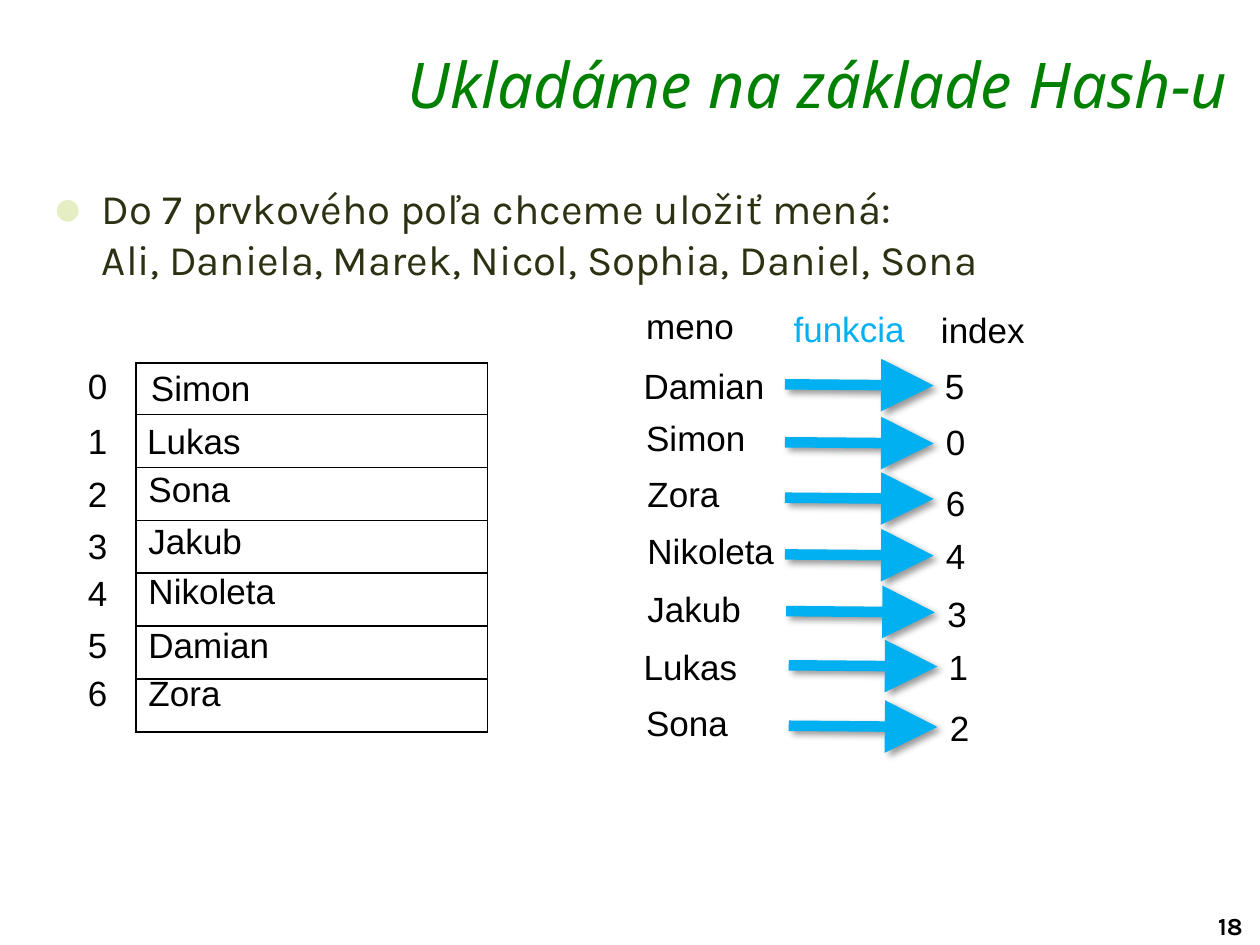
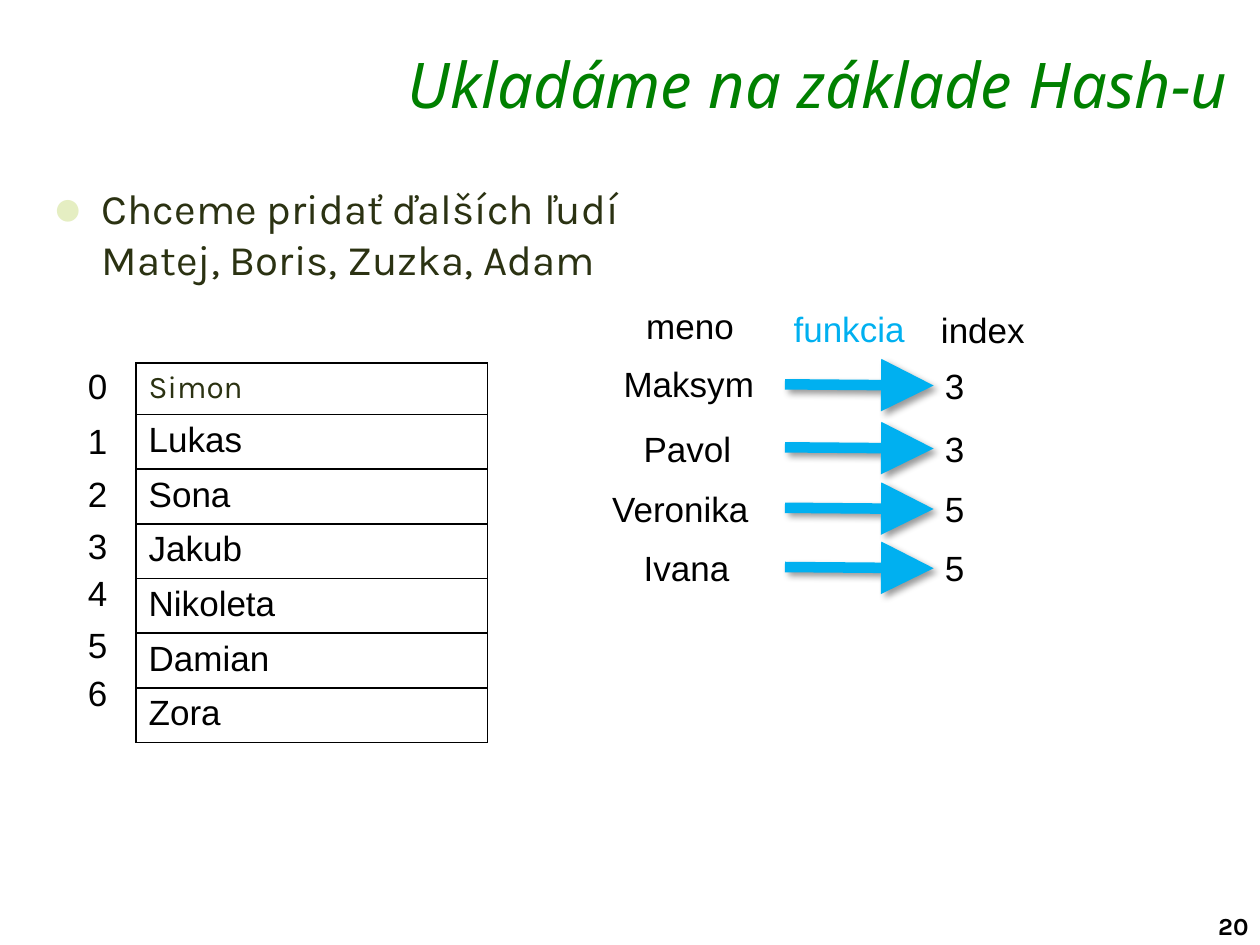
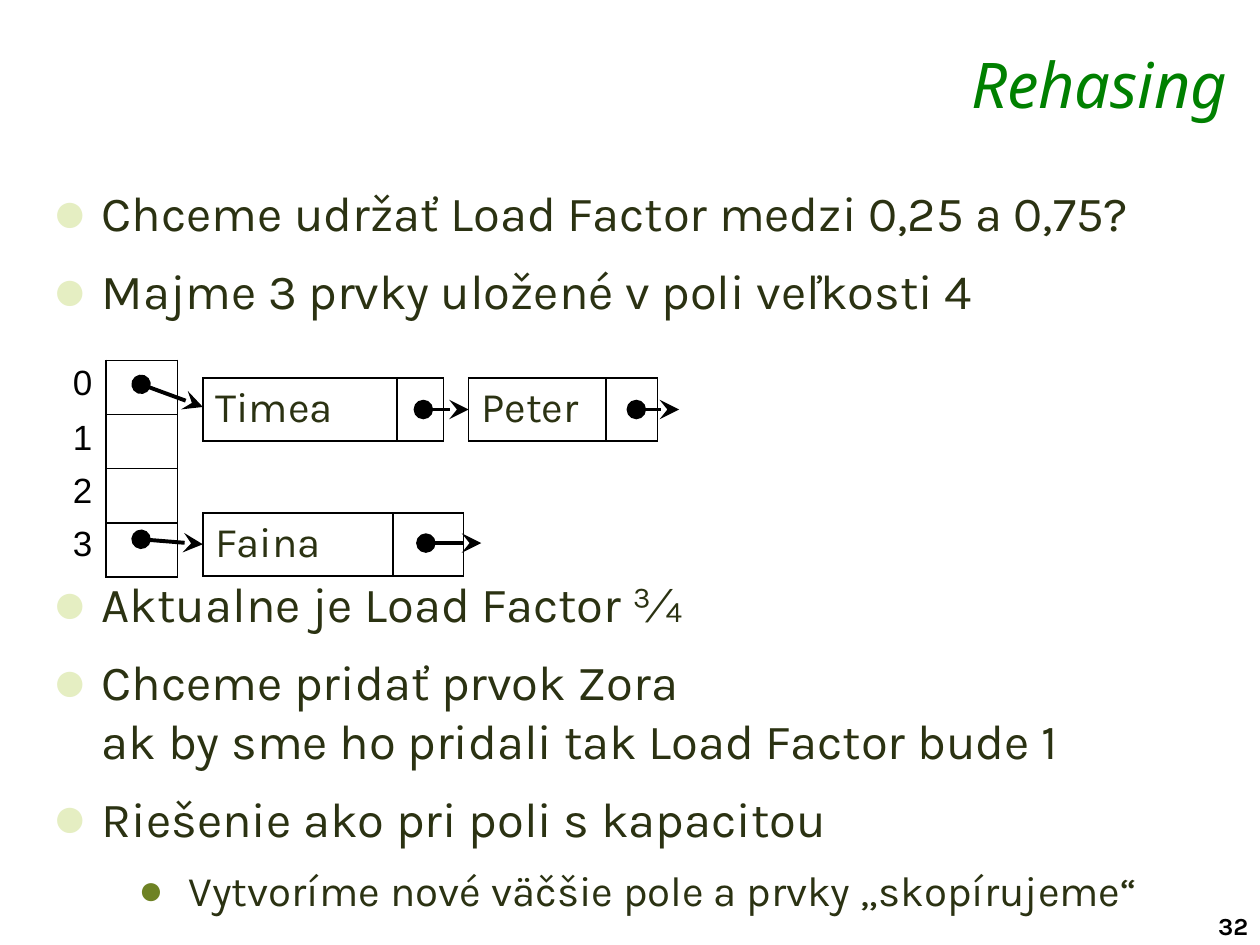
import pptx
import pptx.dml.color
import pptx.enum.shapes
import pptx.enum.text
import pptx.oxml
import pptx.oxml.ns
import pptx.util

PX = 9144  # 100 px to the inch
COLORS = {"black": "000000", "white": "FFFFFF", "title": "008000", "text": "2B3212",
          "blue": "00B0F0", "bullet": "E5EEC2", "subbullet": "6E8224"}
# style: font, size, colour
STYLES = {"title": ("Noto Sans", 36, "title"), "number": ("Karla", 14, "black"),
          "label": ("Arial", 20, "black"), "accent": ("Arial", 20, "blue"),
          "entry": ("Karla", 18, "text"), "body": ("Karla", 24, "text"),
          "large": ("Karla", 28, "text")}
# level: left margin, hanging indent, bullet colour, bullet percent, space before
LEVELS = [(39, 39, "bullet", 120, 5), (108, 40, "subbullet", 100, 4)]
# arrow: colour, width, start, end, effect
SHADOW = ('<a:outerShdw blurRad="50800" dist="38100" dir="2700000" algn="tl" rotWithShape="0">'
          '<a:srgbClr val="000000"><a:alpha val="40000"/></a:srgbClr></a:outerShdw>')
ARROWS = {"hash": ("blue", 6, "none", "triangle", SHADOW),
          "pointer": ("black", 2.25, "oval", "stealth", "")}
WIDTHS = {"Simon": 100, "Zora": 78, "Nikoleta": 122, "Jakub": 95, "Lukas": 95, "Sona": 86,
          "Damian": 117, "Maksym": 125, "Pavol": 90, "Veronika": 129, "Ivana": 89,
          "meno": 90, "funkcia": 109, "index": 87}
DIGIT_WIDTH = 36

HASH_LABELS = [("meno", 503, 237), ("index", 737, 240), ("funkcia", 620, 239)]
HASH_LABELS += [(str(index), 60, top)
                for index, top in enumerate([284, 328, 370, 411, 449, 490, 528])]

# name and its place, index and its place, arrow start
STORED = [("Damian", 501, 284, "5", 740, 284, 623, 305),
          ("Simon", 503, 326, "0", 741, 329, 623, 351),
          ("Zora", 504, 370, "6", 741, 377, 623, 395),
          ("Nikoleta", 504, 415, "4", 741, 419, 623, 440),
          ("Jakub", 504, 461, "3", 742, 465, 624, 485),
          ("Lukas", 501, 507, "1", 743, 507, 626, 528),
          ("Sona", 503, 552, "2", 744, 556, 626, 576)]
ADDED = [("Maksym", 485, 283, "3", 740, 284, 623, 305),
         ("Pavol", 501, 334, "3", 740, 334, 623, 355),
         ("Veronika", 476, 382, "5", 740, 382, 623, 403),
         ("Ivana", 501, 429, "5", 740, 429, 623, 450)]
SLOTS = [("Simon", 110, 286), ("Lukas", 107, 328), ("Sona", 108, 366), ("Jakub", 108, 407),
         ("Nikoleta", 108, 447), ("Damian", 108, 490), ("Zora", 108, 528)]

# bullets: text, style, level, extra space before
# tables: left, top, column widths, row heights, rows of (text, style)
# arrows: kind, start x, start y, end x, end y
SLIDES = [
    {"title": "Ukladáme na základe Hash-u", "number": "18", "body": (938, 125),
     "bullets": [("Do 7 prvkového poľa chceme uložiť mená:\n"
                  "Ali, Daniela, Marek, Nicol, Sophia, Daniel, Sona", "body", 0, 0)],
     "tables": [(108, 288, [279], [41] + [42] * 6, [[("", "entry")]] * 7)],
     "labels": HASH_LABELS + SLOTS, "hashes": STORED, "arrows": []},
    {"title": "Ukladáme na základe Hash-u", "number": "20", "body": (938, 125),
     "bullets": [("Chceme pridať ďalších ľudí\nMatej, Boris, Zuzka, Adam", "body", 0, 0)],
     "tables": [(108, 288, [279], [41] + [43] * 6,
                 [[(name, "label" if row else "entry")]
                  for row, (name, left, top) in enumerate(SLOTS)])],
     "labels": HASH_LABELS, "hashes": ADDED, "arrows": []},
    {"title": "Rehasing", "number": "32", "body": (919, 388),
     "bullets": [("Chceme udržať Load Factor medzi 0,25 a 0,75?", "large", 0, 0),
                 ("Majme 3 prvky uložené v poli veľkosti 4", "large", 0, 0),
                 ("Aktualne je Load Factor ¾", "large", 0, 134),
                 ("Chceme pridať prvok Zora\nak by sme ho pridali tak Load Factor bude 1",
                  "large", 0, 0),
                 ("Riešenie ako pri poli s kapacitou", "large", 0, 0),
                 ("Vytvoríme nové väčšie pole a prvky „skopírujeme“", "body", 1, 0)],
     "tables": [(84, 286, [57], [43] * 4, [[("", "entry")]] * 4),
                (161, 300, [154, 37], [50], [[("Timea", "body"), ("", "body")]]),
                (372, 300, [109, 41], [50], [[("Peter", "body"), ("", "body")]]),
                (161, 407, [151, 56], [50], [[("Faina", "body"), ("", "body")]])],
     "labels": [("0", 48, 281), ("1", 48, 325), ("2", 48, 367), ("3", 48, 409)],
     "hashes": [],
     "arrows": [("pointer", 112, 305, 161, 323), ("pointer", 336, 325, 372, 325),
                ("pointer", 505, 325, 539, 325), ("pointer", 112, 428, 161, 432),
                ("pointer", 338, 431, 382, 431)]},
]


def write(para, text, style):
    """Put text in a paragraph and give it one of the shared styles."""
    font_name, size, color = STYLES[style]
    para.text = text
    para.font.name = font_name
    para.font.size = pptx.util.Pt(size)
    para.font.color.rgb = pptx.dml.color.RGBColor.from_string(COLORS[color])


def add_xml(parent, tag, attributes="", content=""):
    parent.append(pptx.oxml.parse_xml(
        f'<a:{tag} {pptx.oxml.ns.nsdecls("a")} {attributes}>{content}</a:{tag}>'))


deck = pptx.Presentation()
deck.slide_width, deck.slide_height = 1000 * PX, 750 * PX

for slide in SLIDES:
    page = deck.slides.add_slide(deck.slide_layouts[5])

    title = page.shapes.title
    title.left, title.top, title.width, title.height = 229 * PX, 31 * PX, 755 * PX, 58 * PX
    title.text_frame.vertical_anchor = pptx.enum.text.MSO_ANCHOR.TOP
    title.text_frame.auto_size = pptx.enum.text.MSO_AUTO_SIZE.NONE
    para = title.text_frame.paragraphs[0]
    para.alignment = pptx.enum.text.PP_ALIGN.RIGHT
    write(para, slide["title"], "title")
    para.font.italic = True

    number = page.shapes.add_textbox(957 * PX, 718 * PX, 51 * PX, 33 * PX)
    number.text_frame.word_wrap = True
    para = number.text_frame.paragraphs[0]
    write(para, slide["number"], "number")
    para.font.bold = True

    width, height = slide["body"]
    body = page.shapes.add_textbox(32 * PX, 140 * PX, width * PX, height * PX)
    body.text_frame.word_wrap = True
    for position, (text, style, level, gap) in enumerate(slide["bullets"]):
        para = body.text_frame.add_paragraph() if position else body.text_frame.paragraphs[0]
        margin, hanging, color, percent, before = LEVELS[level]
        para.level = level
        para.space_before = pptx.util.Pt(before + gap if position else 0)
        para.space_after = pptx.util.Pt(6)
        properties = para._p.get_or_add_pPr()
        properties.set("marL", str(margin * PX))
        properties.set("indent", str(-hanging * PX))
        add_xml(properties, "buClr", content=f'<a:srgbClr val="{COLORS[color]}"/>')
        add_xml(properties, "buSzPct", f'val="{percent * 1000}"')
        add_xml(properties, "buFont", 'typeface="Arial"')
        add_xml(properties, "buChar", 'char="●"')
        write(para, text, style)

    for left, top, widths, heights, rows in slide["tables"]:
        table = page.shapes.add_table(len(heights), len(widths), left * PX, top * PX,
                                      sum(widths) * PX, sum(heights) * PX).table
        table.first_row = table.horz_banding = False
        for column, width in zip(table.columns, widths):
            column.width = width * PX
        for row, height, entries in zip(table.rows, heights, rows):
            row.height = height * PX
            for cell, (text, style) in zip(row.cells, entries):
                for side in ("lnL", "lnR", "lnT", "lnB"):
                    add_xml(cell._tc.get_or_add_tcPr(), side, 'w="12700"',
                            f'<a:solidFill><a:srgbClr val="{COLORS["black"]}"/></a:solidFill>')
                cell.fill.solid()
                cell.fill.fore_color.rgb = pptx.dml.color.RGBColor.from_string(COLORS["white"])
                if not text:  # keeps an empty row from growing past its height
                    cell.margin_top = cell.margin_bottom = 0
                write(cell.text_frame.paragraphs[0], text, style)

    labels = list(slide["labels"])
    arrows = list(slide["arrows"])
    for name, name_left, name_top, index, index_left, index_top, x, y in slide["hashes"]:
        labels += [(name, name_left, name_top), (index, index_left, index_top)]
        arrows.append(("hash", x, y, x + 118, y + 1))

    for text, left, top in labels:
        box = page.shapes.add_textbox(left * PX, top * PX,
                                      WIDTHS.get(text, DIGIT_WIDTH) * PX, 44 * PX)
        box.text_frame.word_wrap = False
        box.text_frame.auto_size = pptx.enum.text.MSO_AUTO_SIZE.SHAPE_TO_FIT_TEXT
        write(box.text_frame.paragraphs[0], text, "accent" if text == "funkcia" else "label")

    for kind, start_x, start_y, end_x, end_y in arrows:
        color, weight, head, tail, effect = ARROWS[kind]
        arrow = page.shapes.add_connector(pptx.enum.shapes.MSO_CONNECTOR.STRAIGHT,
                                          start_x * PX, start_y * PX, end_x * PX, end_y * PX)
        arrow.line.color.rgb = pptx.dml.color.RGBColor.from_string(COLORS[color])
        arrow.line.width = pptx.util.Pt(weight)
        outline = arrow.line._get_or_add_ln()
        add_xml(outline, "headEnd", f'type="{head}" w="lg" len="lg"')
        add_xml(outline, "tailEnd", f'type="{tail}" w="lg" len="lg"')
        add_xml(arrow._element.spPr, "effectLst", content=effect)

deck.save("out.pptx")
